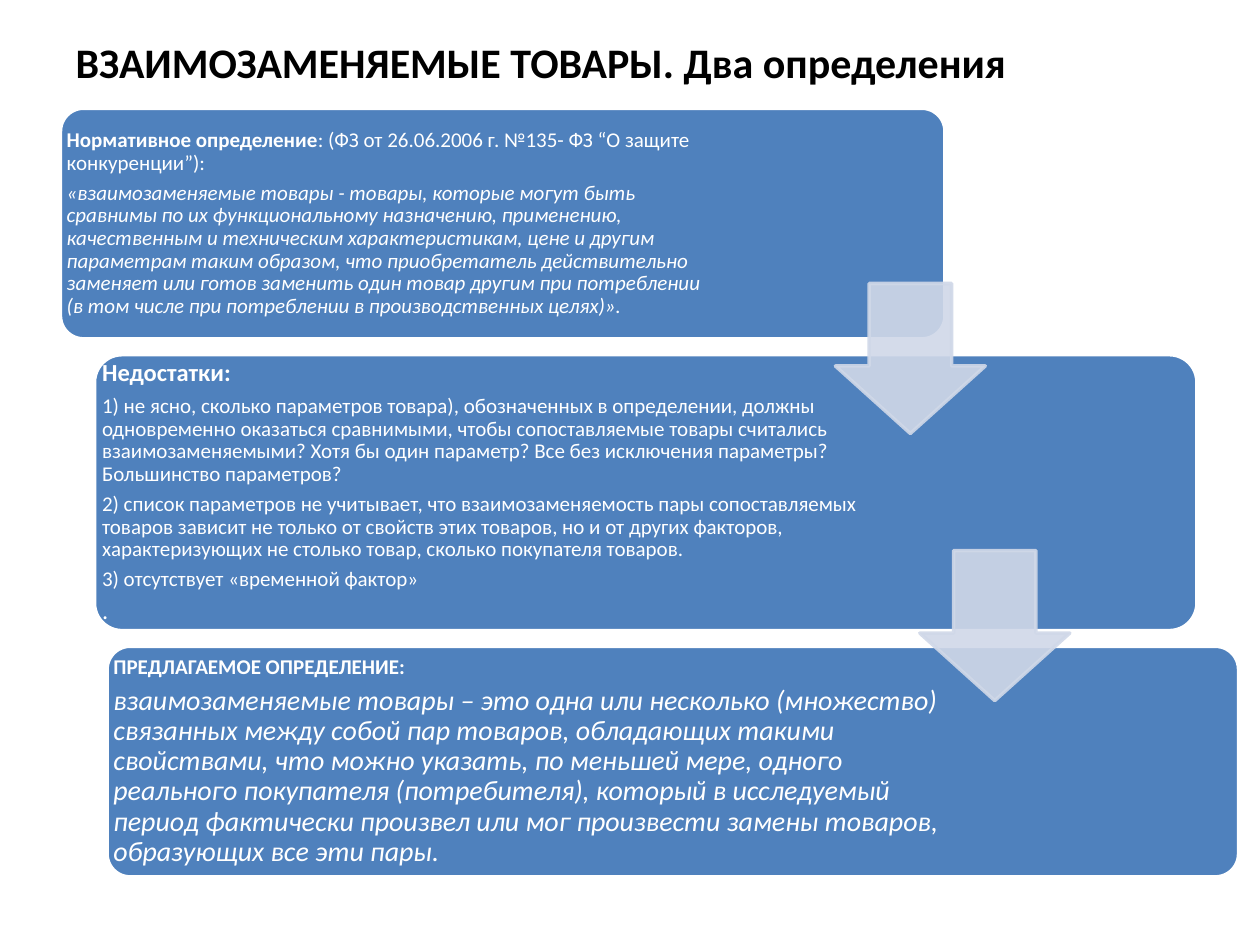
import dataclasses
import typing

import lxml.etree
import pptx
import pptx.dml.color
import pptx.enum.shapes
import pptx.enum.text
import pptx.oxml.ns
import pptx.util

SLIDE_WIDTH = pptx.util.Inches(10)
SLIDE_HEIGHT = pptx.util.Inches(7.5)
COLUMN = SLIDE_WIDTH / 100
ROW = SLIDE_HEIGHT / 75
PANEL_TOP = 8.6
PANEL_GAP = 1.25
ARROW_SIZE = 11.9


@dataclasses.dataclass(frozen=True)
class Theme:
    font: str = "Calibri"
    title: str = "000000"
    panel: str = "4F81BD"
    light: str = "FFFFFF"
    arrow: str = "D0D8E8"
    arrow_opacity: float = 0.9
    title_size: int = 24
    body_size: int = 12
    heading_size: int = 14
    definition_size: int = 16
    outline: int = 2
    line_spacing: float = 0.9
    space_after: float = 0.35


THEME = Theme()


class Run(typing.NamedTuple):
    text: str
    size: int = THEME.body_size
    bold: bool = False
    italic: bool = False


class Panel(typing.NamedTuple):
    left: float
    width: float
    text_width: float
    height: float
    inset: float
    paragraphs: list[list[Run]]


class Arrow(typing.NamedTuple):
    left: float
    top: float


PANELS = [
    Panel(4.8, 70.2, 53, 18.3, 0.5, [
        [Run("Нормативное определение", bold=True),
         Run(": (ФЗ от 26.06.2006 г. №135- ФЗ “О защите конкуренции”):")],
        [Run("«взаимозаменяемые товары - товары, которые могут быть сравнимы по их "
             "функциональному назначению, применению, качественным и техническим "
             "характеристикам, цене и другим параметрам таким образом, что приобретатель "
             "действительно заменяет или готов заменить один товар другим при потреблении "
             "(в том числе при потреблении в производственных целях)».", italic=True)],
    ]),
    Panel(7.5, 87.5, 66.2, 21.9, 0.6, [
        [Run("Недостатки:", THEME.heading_size, bold=True)],
        [Run("1) не ясно, сколько параметров товара), обозначенных в определении, должны "
             "одновременно оказаться сравнимыми, чтобы сопоставляемые товары считались "
             "взаимозаменяемыми? Хотя бы один параметр? Все без исключения параметры? "
             "Большинство параметров?")],
        [Run("2) список параметров не учитывает, что взаимозаменяемость пары сопоставляемых "
             "товаров зависит не только от свойств этих товаров, но и от других факторов, "
             "характеризующих не столько товар, сколько покупателя товаров.")],
        [Run("3) отсутствует «временной фактор»")],
        [Run(".", THEME.heading_size)],
    ]),
    Panel(8.5, 89.8, 67.9, 18.3, 0.5, [
        [Run("ПРЕДЛАГАЕМОЕ ОПРЕДЕЛЕНИЕ:", bold=True)],
        [Run("взаимозаменяемые товары – это одна или несколько (множество) связанных между "
             "собой пар товаров, обладающих такими свойствами, что можно указать, по меньшей "
             "мере, одного реального покупателя (потребителя), который в исследуемый период "
             "фактически произвел или мог произвести замены товаров, образующих все эти пары.",
             THEME.definition_size, italic=True)],
    ]),
]
ARROWS = [Arrow(66.3, 22.5), Arrow(73, 43.7)]


def grid_box(left: float, top: float, width: float, height: float) -> list[int]:
    return [round(left * COLUMN), round(top * ROW), round(width * COLUMN), round(height * ROW)]


def set_attributes(target: typing.Any, values: dict[str, typing.Any]) -> None:
    for name, value in values.items():
        setattr(target, name, value)


def add_run(paragraph, run: Run, color: str) -> None:
    text_run = paragraph.add_run()
    text_run.text = run.text
    set_attributes(text_run.font, {
        "name": THEME.font, "size": pptx.util.Pt(run.size),
        "bold": run.bold, "italic": run.italic,
    })
    text_run.font.color.rgb = pptx.dml.color.RGBColor.from_string(color)


def add_block(slide, preset, box: list[int], adjustments: list[float], fill: str, line: str):
    shape = slide.shapes.add_shape(preset, *box)
    shape.shadow.inherit = False
    for index, value in enumerate(adjustments):
        shape.adjustments[index] = value
    shape.fill.solid()
    shape.fill.fore_color.rgb = pptx.dml.color.RGBColor.from_string(fill)
    shape.line.color.rgb = pptx.dml.color.RGBColor.from_string(line)
    shape.line.width = pptx.util.Pt(THEME.outline)
    return shape


def add_title(slide, text: str) -> None:
    title = slide.shapes.title
    set_attributes(title, dict(zip(("left", "top", "width", "height"), grid_box(5, 3, 90, 3.8))))
    set_attributes(title.text_frame, {
        "auto_size": pptx.enum.text.MSO_AUTO_SIZE.NONE,
        "vertical_anchor": pptx.enum.text.MSO_ANCHOR.MIDDLE,
    })
    paragraph = title.text_frame.paragraphs[0]
    paragraph.alignment = pptx.enum.text.PP_ALIGN.LEFT
    add_run(paragraph, Run(text, THEME.title_size, bold=True), THEME.title)


def add_panel(slide, panel: Panel, top: float) -> None:
    add_block(slide, pptx.enum.shapes.MSO_SHAPE.ROUNDED_RECTANGLE,
              grid_box(panel.left, top, panel.width, panel.height),
              [0.1], THEME.panel, THEME.light)
    text_box = slide.shapes.add_textbox(
        *grid_box(panel.left, top, panel.text_width, panel.height))
    frame = text_box.text_frame
    inset = round(panel.inset * COLUMN)
    set_attributes(frame, {
        "word_wrap": True, "vertical_anchor": pptx.enum.text.MSO_ANCHOR.MIDDLE,
        "margin_left": inset, "margin_right": inset,
        "margin_top": inset, "margin_bottom": inset,
    })
    for index, runs in enumerate(panel.paragraphs):
        paragraph = frame.add_paragraph() if index else frame.paragraphs[0]
        set_attributes(paragraph, {
            "line_spacing": THEME.line_spacing,
            "space_after": pptx.util.Pt(THEME.space_after * runs[0].size),
        })
        for run in runs:
            add_run(paragraph, run, THEME.light)


def add_arrow(slide, arrow: Arrow) -> None:
    shape = add_block(slide, pptx.enum.shapes.MSO_SHAPE.DOWN_ARROW,
                      grid_box(arrow.left, arrow.top, ARROW_SIZE, ARROW_SIZE),
                      [0.55, 0.45], THEME.arrow, THEME.arrow)
    qualified = pptx.oxml.ns.qn
    for color in list(shape._element.spPr.iter(qualified("a:srgbClr"))):
        alpha = lxml.etree.SubElement(color, qualified("a:alpha"))
        alpha.set("val", str(round(THEME.arrow_opacity * 100000)))


def main() -> None:
    presentation = pptx.Presentation()
    presentation.slide_width = SLIDE_WIDTH
    presentation.slide_height = SLIDE_HEIGHT
    slide = presentation.slides.add_slide(presentation.slide_layouts[5])
    add_title(slide, "ВЗАИМОЗАМЕНЯЕМЫЕ ТОВАРЫ. Два определения")
    top = PANEL_TOP
    for panel in PANELS:
        add_panel(slide, panel, top)
        top += panel.height + PANEL_GAP
    for arrow in ARROWS:
        add_arrow(slide, arrow)
    presentation.save("out.pptx")


if __name__ == "__main__":
    main()
